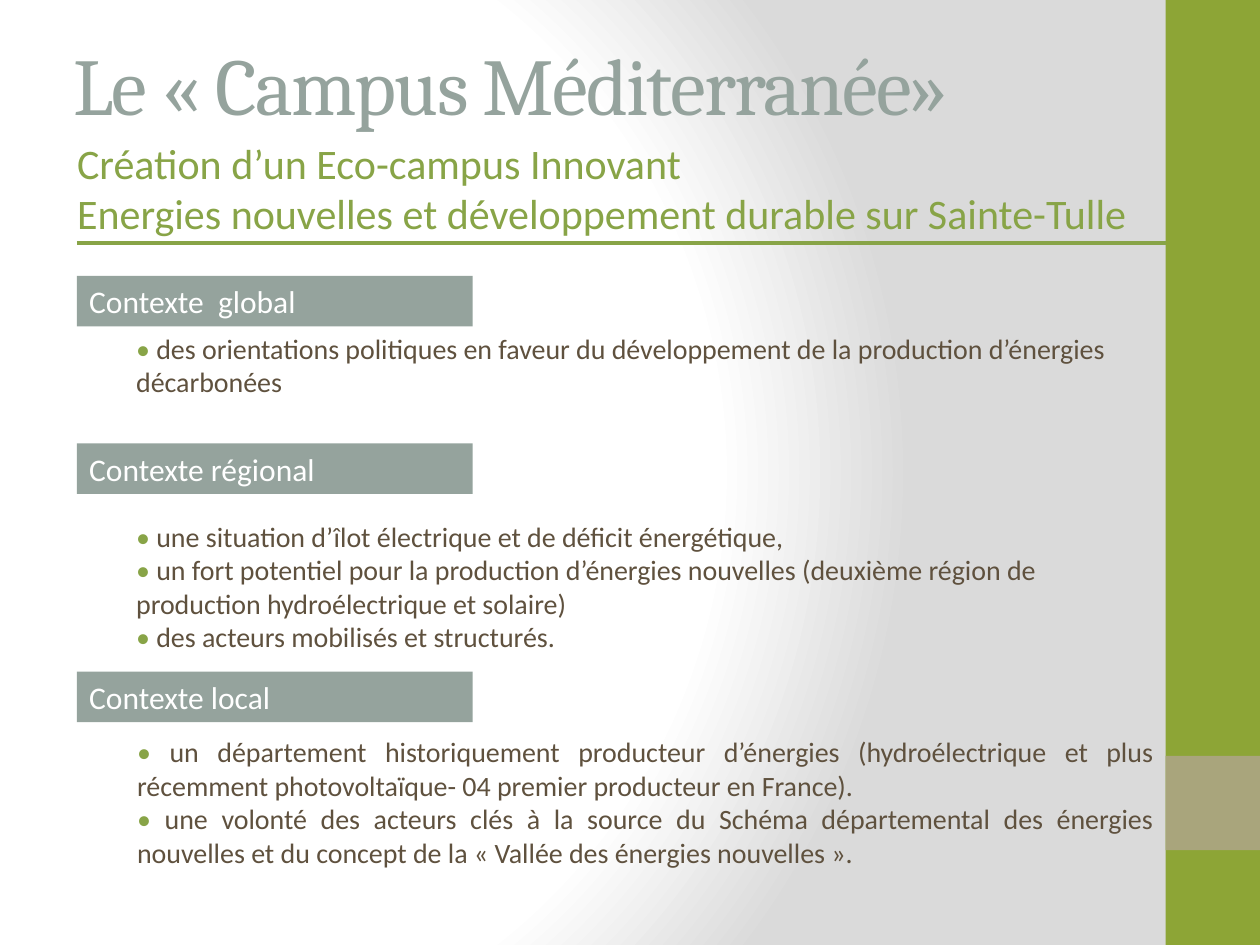
from dataclasses import dataclass

from lxml import etree
from pptx import Presentation
from pptx.dml.color import RGBColor
from pptx.enum.shapes import MSO_CONNECTOR, MSO_SHAPE
from pptx.enum.text import MSO_ANCHOR, MSO_AUTO_SIZE, PP_ALIGN
from pptx.oxml import parse_xml
from pptx.oxml.ns import qn
from pptx.shapes.autoshape import Shape
from pptx.slide import Slide
from pptx.text.text import TextFrame, _Paragraph, _Run
from pptx.util import Cm, Pt

RECT = MSO_SHAPE.RECTANGLE
STRAIGHT = MSO_CONNECTOR.STRAIGHT
TOP = MSO_ANCHOR.TOP
MIDDLE = MSO_ANCHOR.MIDDLE
FIXED = MSO_AUTO_SIZE.NONE
LEFT = PP_ALIGN.LEFT
JUST = PP_ALIGN.JUSTIFY

LIME = RGBColor(0x8D, 0xA5, 0x36)
SAND = RGBColor(0xA9, 0xA5, 0x7C)
SAGE = RGBColor(0x95, 0xA3, 0x9D)
GREEN = RGBColor(0x88, 0xA4, 0x47)
BROWN = RGBColor(0x5F, 0x51, 0x3E)
WHITE = RGBColor(0xFF, 0xFF, 0xFF)

BACK = """
<p:bg xmlns:p="http://schemas.openxmlformats.org/presentationml/2006/main"
      xmlns:a="http://schemas.openxmlformats.org/drawingml/2006/main">
  <p:bgPr>
    <a:gradFill rotWithShape="1">
      <a:gsLst>
        <a:gs pos="0"><a:srgbClr val="FFFFFF"/></a:gs>
        <a:gs pos="75000"><a:srgbClr val="FFFFFF"/></a:gs>
        <a:gs pos="100000"><a:srgbClr val="DADADA"/></a:gs>
      </a:gsLst>
      <a:path path="circle">
        <a:fillToRect l="20000" t="50000" r="100000" b="50000"/>
      </a:path>
    </a:gradFill>
    <a:effectLst/>
  </p:bgPr>
</p:bg>"""


@dataclass
class Box:
    left: float
    top: float
    width: float
    height: float


@dataclass
class Part:
    label: str
    top: float
    box: Box
    mark: str
    items: list[str]
    align: PP_ALIGN = LEFT


PARTS = [
    Part("Contexte  global", 5.56, Box(2.49, 6.55, 21.03, 1.63), "• ", [
        "des orientations politiques en faveur du développement de la "
        "production d’énergies décarbonées",
    ]),
    Part("Contexte régional", 8.94, Box(2.49, 10.34, 21.03, 3), "• ", [
        "une situation d’îlot électrique et de déficit énergétique,",
        "un fort potentiel pour la production d’énergies nouvelles "
        "(deuxième région de production hydroélectrique et solaire)",
        "des acteurs mobilisés et structurés.",
    ]),
    Part("Contexte local", 13.54, Box(2.51, 14.68, 21.01, 3), "• ", [
        "un département historiquement producteur d’énergies "
        "(hydroélectrique et plus récemment photovoltaïque- 04 premier "
        "producteur en France).",
        "une volonté des acteurs clés à la source du Schéma départemental "
        "des énergies nouvelles et du concept de la « Vallée des énergies "
        "nouvelles ».",
    ], JUST),
]


def style(run: _Run, size: float, color: RGBColor, face: str = "Calibri") -> None:
    run.font.name = face
    run.font.size = Pt(size)
    run.font.bold = False
    run.font.color.rgb = color


def place(shape: Shape, box: Box, anchor: MSO_ANCHOR = TOP) -> TextFrame:
    shape.left, shape.top = Cm(box.left), Cm(box.top)
    shape.width, shape.height = Cm(box.width), Cm(box.height)
    frame = shape.text_frame
    frame.word_wrap = True
    frame.auto_size = FIXED
    frame.vertical_anchor = anchor
    return frame


def flat(para: _Paragraph, align: PP_ALIGN = LEFT) -> None:
    para.alignment = align
    para.space_before = para.space_after = Pt(0)
    para.line_spacing = 1.0
    props = para._p.get_or_add_pPr()
    props.set("marL", "0")
    props.set("indent", "0")
    etree.SubElement(props, qn("a:buNone"))


def block(slide: Slide, box: Box, color: RGBColor) -> Shape:
    shape = slide.shapes.add_shape(
        RECT, Cm(box.left), Cm(box.top), Cm(box.width), Cm(box.height))
    shape.shadow.inherit = False
    shape.fill.solid()
    shape.fill.fore_color.rgb = color
    shape.line.fill.background()
    return shape


def rule(slide: Slide, start: float, end: float, top: float) -> None:
    line = slide.shapes.add_connector(
        STRAIGHT, Cm(start), Cm(top), Cm(end), Cm(top))
    line.line.color.rgb = GREEN
    line.line.width = Pt(2)
    etree.SubElement(line._element.spPr, qn("a:effectLst"))


def head(shape: Shape) -> None:
    frame = place(shape, Box(1.22, 0.58, 21.16, 2.18), MIDDLE)
    frame.text = "Le « Campus Méditerranée»"
    para = frame.paragraphs[0]
    para.alignment = LEFT
    run = para.runs[0]
    style(run, 46, SAGE, "Cambria")
    run.font._element.set("spc", "-100")


def intro(shape: Shape) -> None:
    frame = place(shape, Box(1.3, 2.64, 22.23, 2.31))
    frame.text = ("Création d’un Eco-campus Innovant\n"
                  "Energies nouvelles et développement durable sur Sainte-Tulle")
    for para in frame.paragraphs:
        flat(para)
        style(para.runs[0], 24, GREEN)


def section(slide: Slide, shape: Shape, part: Part) -> None:
    tag = block(slide, Box(1.55, part.top, 7.98, 1.02), SAGE)
    tag.text_frame.text = part.label
    tag.text_frame.vertical_anchor = TOP
    para = tag.text_frame.paragraphs[0]
    para.alignment = LEFT
    style(para.runs[0], 18, WHITE)

    frame = place(shape, part.box)
    frame.text = "\n".join([part.mark] * len(part.items))
    for para, item in zip(frame.paragraphs, part.items):
        flat(para, part.align)
        style(para.runs[0], 16, GREEN)
        run = para.add_run()
        run.text = item
        style(run, 16, BROWN)


def main() -> None:
    deck = Presentation()
    deck.slide_width, deck.slide_height = Cm(25.4), Cm(19.05)
    slide = deck.slides.add_slide(deck.slide_layouts.get_by_name("Comparison"))
    slide._element.cSld.insert(0, parse_xml(BACK))
    block(slide, Box(23.5, 0, 1.9, 19.05), LIME)
    block(slide, Box(23.5, 15.24, 1.9, 1.9), SAND)
    title, lead, *lists = list(slide.placeholders)[:5]
    head(title)
    intro(lead)
    rule(slide, 1.55, 23.5, 4.9)
    for shape, part in zip(lists, PARTS):
        section(slide, shape, part)
    deck.save("out.pptx")


if __name__ == "__main__":
    main()
